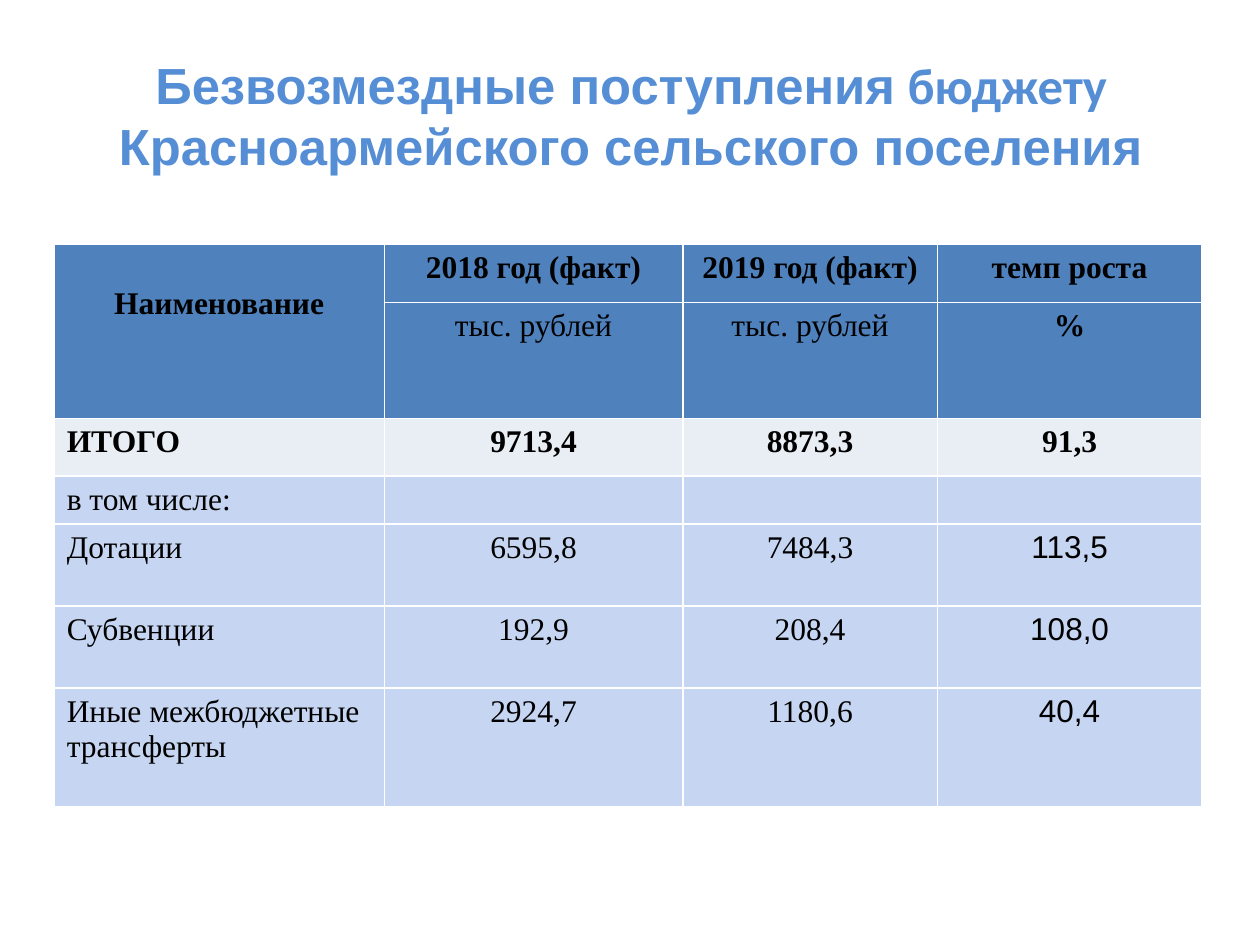
from dataclasses import dataclass

from lxml.etree import SubElement
from pptx import Presentation
from pptx.dml.color import RGBColor
from pptx.enum.text import MSO_ANCHOR, MSO_AUTO_SIZE, PP_ALIGN as Align
from pptx.oxml.ns import qn
from pptx.table import _Cell as Cell
from pptx.util import Inches, Pt

SERIF, SANS = "Times New Roman", "Arial"
HEADER, TOTAL, BODY = "4F81BD", "E9EDF4", "C6D5F2"
COLUMN_WIDTHS = (2.62, 2.37, 2.02, 2.1)


@dataclass
class Row:
    texts: tuple[str, str, str, str]
    height: float
    fill: str = BODY
    bold: tuple[bool, bool, bool, bool] = (False,) * 4
    rate_font: str = SERIF


ALL_BOLD = (True,) * 4
ROWS = (
    Row(("Наименование", "2018 год (факт)", "2019 год (факт)", "темп роста"),
        0.46, HEADER, ALL_BOLD),
    Row(("", "тыс. рублей", "тыс. рублей", "%"),
        0.92, HEADER, (False, False, False, True)),
    Row(("ИТОГО", "9713,4", "8873,3", "91,3"), 0.46, TOTAL, ALL_BOLD),
    Row(("в том числе:", "", "", ""), 0.38),
    Row(("Дотации", "6595,8", "7484,3", "113,5"), 0.65, rate_font=SANS),
    Row(("Субвенции", "192,9", "208,4", "108,0"), 0.65, rate_font=SANS),
    Row(("Иные межбюджетные трансферты", "2924,7", "1180,6", "40,4"),
        0.94, rate_font=SANS),
)


def rgb(color: str) -> RGBColor:
    return RGBColor.from_string(color)


def add_borders(cell: Cell, color: str = "FFFFFF") -> None:
    properties = cell._tc.get_or_add_tcPr()
    for position, side in enumerate(("a:lnL", "a:lnR", "a:lnT", "a:lnB")):
        line = SubElement(properties, qn(side), w=str(Pt(1)))
        fill = SubElement(line, qn("a:solidFill"))
        SubElement(fill, qn("a:srgbClr"), val=color)
        properties.insert(position, line)  # borders precede the cell fill


def fill_cell(cell: Cell, text: str, fill: str, font_name: str,
              bold: bool, align: Align) -> None:
    cell.fill.solid()
    cell.fill.fore_color.rgb = rgb(fill)
    add_borders(cell)
    cell.text = text
    paragraph = cell.text_frame.paragraphs[0]
    paragraph.alignment = align
    font = paragraph.font
    font.name, font.size, font.bold = font_name, Pt(18), bold
    font.color.rgb = rgb("000000")


presentation = Presentation()
presentation.slide_width, presentation.slide_height = Inches(10), Inches(7.5)
slide = presentation.slides.add_slide(presentation.slide_layouts[5])

# Title
title = slide.shapes.title
title.left, title.top = Inches(0.51), Inches(0.36)
title.width, title.height = Inches(9), Inches(1.1)
title_frame = title.text_frame
title_frame.auto_size = MSO_AUTO_SIZE.NONE
title_frame.vertical_anchor = MSO_ANCHOR.MIDDLE
heading = title_frame.paragraphs[0]
heading.alignment = Align.CENTER
heading.font.size, heading.font.bold = Pt(29), True
heading.font.color.rgb = rgb("558ED5")
for words, font_name in (
    ("Безвозмездные поступления", SANS),
    (" бюджету ", "Calibri"),
    ("Красноармейского сельского поселения", SANS),
):
    run = heading.add_run()
    run.text = words
    run.font.name = font_name

# Table of receipts
receipts = slide.shapes.add_table(
    len(ROWS), len(COLUMN_WIDTHS), Inches(0.43), Inches(1.94),
    Inches(sum(COLUMN_WIDTHS)), Inches(sum(row.height for row in ROWS)),
).table
receipts.first_row = receipts.horz_banding = False
for column, width in zip(receipts.columns, COLUMN_WIDTHS):
    column.width = Inches(width)
for r, row in enumerate(ROWS):
    receipts.rows[r].height = Inches(row.height)
    for c, (text, bold) in enumerate(zip(row.texts, row.bold)):
        is_label = c == 0 and row.fill != HEADER
        fill_cell(receipts.cell(r, c), text, row.fill,
                  row.rate_font if c == 3 else SERIF, bold,
                  Align.LEFT if is_label else Align.CENTER)

# The name heading spans both header rows, one line lower
name_heading = receipts.cell(0, 0)
name_heading.merge(receipts.cell(1, 0))
name_heading.margin_top = Inches(0.33)

presentation.save("out.pptx")
